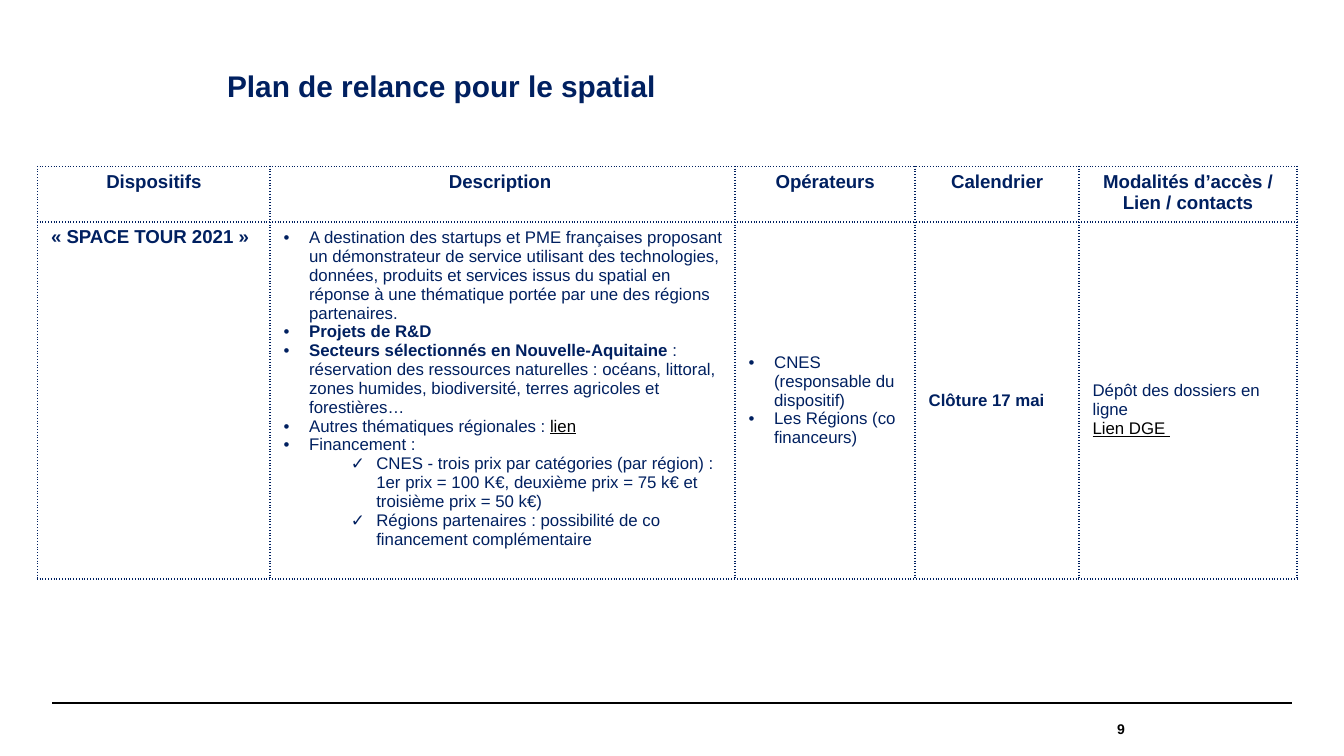
from lxml import etree
from pptx import Presentation
from pptx.dml.color import RGBColor
from pptx.enum.shapes import MSO_CONNECTOR
from pptx.enum.text import MSO_ANCHOR, PP_ALIGN
from pptx.oxml.ns import qn
from pptx.util import Inches, Pt

NAVY = RGBColor(0x00, 0x20, 0x60)
BLACK = RGBColor(0, 0, 0)
LEFT, CENTER, RIGHT = PP_ALIGN.LEFT, PP_ALIGN.CENTER, PP_ALIGN.RIGHT
TOP, MIDDLE = MSO_ANCHOR.TOP, MSO_ANCHOR.MIDDLE
STRAIGHT = MSO_CONNECTOR.STRAIGHT
DOT, TICK = "•", "✓"
INDENT = {DOT: 0.19, TICK: 0.69}
WIDTHS = [1.73, 3.46, 1.34, 1.22, 1.62]
HEIGHTS = [0.41, 2.63]
HEADS = [
    "Dispositifs",
    "Description ",
    "Opérateurs",
    "Calendrier",
    "Modalités d’accès / Lien / contacts",
]
ABOUT = [
    (DOT, [("A destination des startups et PME françaises proposant un démonstrateur "
            "de service utilisant des technologies, données, produits et services issus "
            "du spatial en réponse à une thématique portée par une des régions "
            "partenaires.", "")]),
    (DOT, [("Projets de R&D", "bold")]),
    (DOT, [("Secteurs sélectionnés en Nouvelle-Aquitaine ", "bold"),
           (": réservation des ressources naturelles : océans, littoral, zones humides, "
            "biodiversité, terres agricoles et forestières…", "")]),
    (DOT, [("Autres thématiques régionales : ", ""), ("lien", "link")]),
    (DOT, [("Financement :", "")]),
    (TICK, [("CNES - trois prix par catégories (par région) : 1er prix = 100 K€, "
             "deuxième prix = 75 k€ et troisième prix = 50 k€)", "")]),
    (TICK, [("Régions partenaires : possibilité de co financement complémentaire", "")]),
]
ACTORS = [
    (DOT, [("CNES (responsable du dispositif)", "")]),
    (DOT, [("Les Régions (co financeurs)", "")]),
]
DATES = [("", [("Clôture 17 mai", "bold")])]
ACCESS = [
    ("", [("Dépôt des dossiers en ligne", "")]),
    ("", [("Lien DGE ", "link")]),
]


class Deck:
    """Holds the style and the current slide, and draws each kind of element."""

    def __init__(self, slide, face="Arial"):
        self.slide = slide
        self.face = face

    def style(self, run, size, bold=False, color=NAVY, under=False):
        font = run.font
        font.name = self.face
        font.size = Pt(size)
        font.bold = bold
        font.underline = under
        font.color.rgb = color

    def bullet(self, para, mark):
        props = para._p.get_or_add_pPr()
        props.set("marL", str(Inches(INDENT[mark])))
        props.set("indent", str(-Inches(INDENT[DOT])))
        etree.SubElement(props, qn("a:buFont")).set("typeface", self.face)
        etree.SubElement(props, qn("a:buChar")).set("char", mark)

    def text(self, words, x, y, w, h, size, color, align=LEFT, anchor=TOP, space=1):
        box = self.slide.shapes.add_textbox(Inches(x), Inches(y), Inches(w), Inches(h))
        frame = box.text_frame
        frame.word_wrap = True
        frame.margin_left = frame.margin_right = 0
        frame.margin_top = frame.margin_bottom = 0
        frame.vertical_anchor = anchor
        frame.text = words
        para = frame.paragraphs[0]
        para.alignment = align
        para.line_spacing = space
        self.style(para.runs[0], size, True, color)

    def rule(self, x, y, end, color, width):
        line = self.slide.shapes.add_connector(
            STRAIGHT, Inches(x), Inches(y), Inches(end), Inches(y))
        line.line.color.rgb = color
        line.line.width = Pt(width)
        etree.SubElement(line._element.spPr, qn("a:effectLst"))

    def border(self, cell):
        cell.fill.background()
        props = cell._tc.get_or_add_tcPr()
        for spot, side in enumerate(("lnL", "lnR", "lnT", "lnB")):
            edge = etree.Element(qn("a:" + side), w=str(Pt(1)))
            fill = etree.SubElement(edge, qn("a:solidFill"))
            etree.SubElement(fill, qn("a:srgbClr"), val=str(NAVY))
            etree.SubElement(edge, qn("a:prstDash"), val="sysDot")
            props.insert(spot, edge)

    def grid(self, x, y, widths, heights):
        frame = self.slide.shapes.add_table(
            len(heights), len(widths), Inches(x), Inches(y),
            Inches(sum(widths)), Inches(sum(heights)))
        table = frame.table
        table.first_row = table.horz_banding = False
        for column, width in zip(table.columns, widths):
            column.width = Inches(width)
        for row, height in zip(table.rows, heights):
            row.height = Inches(height)
        for cell in table.iter_cells():
            self.border(cell)
        return table

    def label(self, cell, words, align):
        cell.margin_top = Inches(0.04)
        cell.margin_bottom = Inches(0.02)
        cell.text_frame.text = words
        para = cell.text_frame.paragraphs[0]
        para.alignment = align
        self.style(para.runs[0], 10, True)

    def body(self, cell, items, anchor):
        cell.vertical_anchor = anchor
        frame = cell.text_frame
        for spot, (mark, parts) in enumerate(items):
            para = frame.add_paragraph() if spot else frame.paragraphs[0]
            if mark:
                self.bullet(para, mark)
            for words, kind in parts:
                run = para.add_run()
                run.text = words
                link = kind == "link"
                self.style(run, 9, kind == "bold", BLACK if link else NAVY, link)


def main():
    prs = Presentation()
    prs.slide_width, prs.slide_height = Inches(10), Inches(10 * 9 / 16)
    deck = Deck(prs.slides.add_slide(prs.slide_layouts[6]))
    deck.rule(0.39, 5.23, 9.61, BLACK, 0.8)
    deck.text("9", 6.89, 5.23, 1.48, 0.39, 7.5, BLACK, RIGHT, MIDDLE)
    deck.text("Plan de relance pour le spatial", 1.69, 0.37, 9.61, 0.47, 16, NAVY, space=1.5)

    table = deck.grid(0.28, 1.24, WIDTHS, HEIGHTS)
    for col, head in enumerate(HEADS):
        deck.label(table.cell(0, col), head, CENTER)
    deck.label(table.cell(1, 0), "« SPACE TOUR 2021 »", LEFT)
    deck.body(table.cell(1, 1), ABOUT, TOP)
    for col, items in enumerate((ACTORS, DATES, ACCESS), 2):
        deck.body(table.cell(1, col), items, MIDDLE)
    table.cell(1, 1).margin_right = Inches(0.08)
    table.cell(1, 4).margin_top = Inches(0.19)
    prs.save("out.pptx")


if __name__ == "__main__":
    main()
